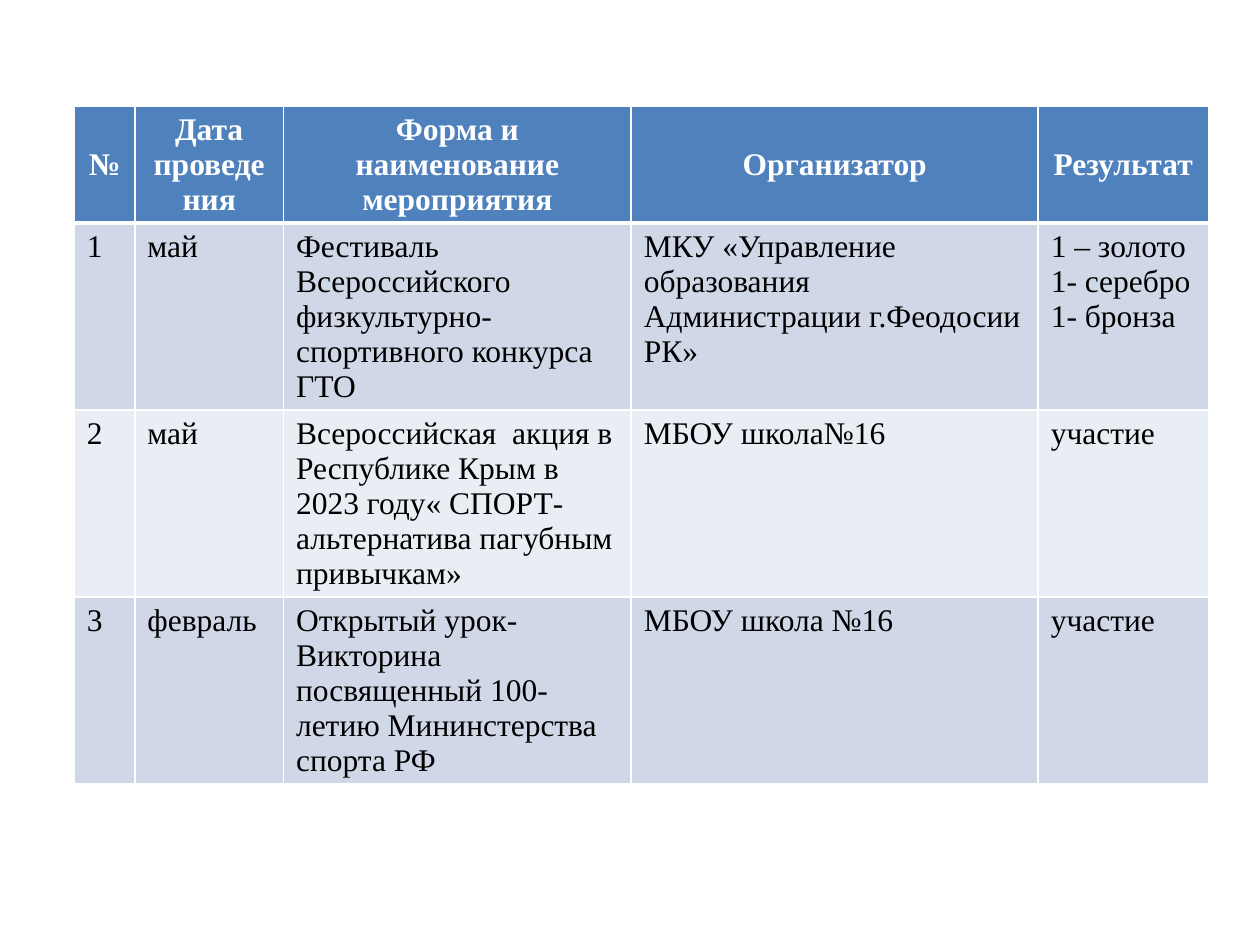
from lxml.etree import SubElement
from pptx import Presentation
from pptx.dml.color import RGBColor
from pptx.enum.text import MSO_ANCHOR, PP_ALIGN
from pptx.oxml.ns import qn
from pptx.util import Inches, Pt

COLORS = {"header": "4F81BD", "odd": "D0D8E8", "even": "E9EDF4",
          "white": "FFFFFF", "black": "000000"}
FONT = {"name": "Times New Roman", "size": Pt(18)}
COL_WIDTHS = [0.48, 1.18, 2.76, 3.23, 1.35]
ROW_HEIGHTS = [0.92, 1.48, 1.48, 1.48]
ROWS = [
    ["№", "Дата проведения", "Форма и наименование мероприятия",
     "Организатор", "Результат"],
    ["1", "май",
     "Фестиваль Всероссийского физкультурно- спортивного конкурса ГТО",
     "МКУ «Управление образования Администрации г.Феодосии РК»",
     "1 – золото\n1- серебро\n1- бронза"],
    ["2", "май",
     "Всероссийская  акция в Республике Крым в 2023 году« "
     "СПОРТ-альтернатива пагубным привычкам»",
     "МБОУ школа№16", "участие"],
    ["3", "февраль",
     "Открытый урок- Викторина посвященный 100- летию Мининстерства спорта РФ",
     "МБОУ школа №16", "участие"],
]


def set_borders(cell, widths):
    tcPr = cell._tc.get_or_add_tcPr()
    for side, width in widths.items():
        ln = SubElement(tcPr, qn(f"a:ln{side}"), w=str(Pt(width)))
        fill = SubElement(ln, qn("a:solidFill"))
        SubElement(fill, qn("a:srgbClr"), val=COLORS["white"])


prs = Presentation()
prs.slide_width, prs.slide_height = Inches(10), Inches(7.5)
s = prs.slides.add_slide(prs.slide_layouts[6])

table = s.shapes.add_table(len(ROWS), len(COL_WIDTHS), Inches(0.59), Inches(0.84),
                           Inches(sum(COL_WIDTHS)), Inches(sum(ROW_HEIGHTS))).table
for col, width in zip(table.columns, COL_WIDTHS):
    col.width = Inches(width)
for row, height in zip(table.rows, ROW_HEIGHTS):
    row.height = Inches(height)

for i, texts in enumerate(ROWS):
    header = i == 0
    fill = "header" if header else "odd" if i % 2 else "even"
    for j, text in enumerate(texts):
        cell = table.cell(i, j)
        set_borders(cell, {"L": 1, "R": 1, "T": 3 if i == 1 else 1,
                           "B": 3 if header else 1})
        cell.fill.solid()
        cell.fill.fore_color.rgb = RGBColor.from_string(COLORS[fill])
        cell.vertical_anchor = MSO_ANCHOR.MIDDLE if header else MSO_ANCHOR.TOP
        cell.text = text
        for p in cell.text_frame.paragraphs:
            p.alignment = PP_ALIGN.CENTER if header else PP_ALIGN.LEFT
            for r in p.runs:
                for key, value in {**FONT, "bold": header}.items():
                    setattr(r.font, key, value)
                r.font.color.rgb = RGBColor.from_string(
                    COLORS["white" if header else "black"])

prs.save("out.pptx")
